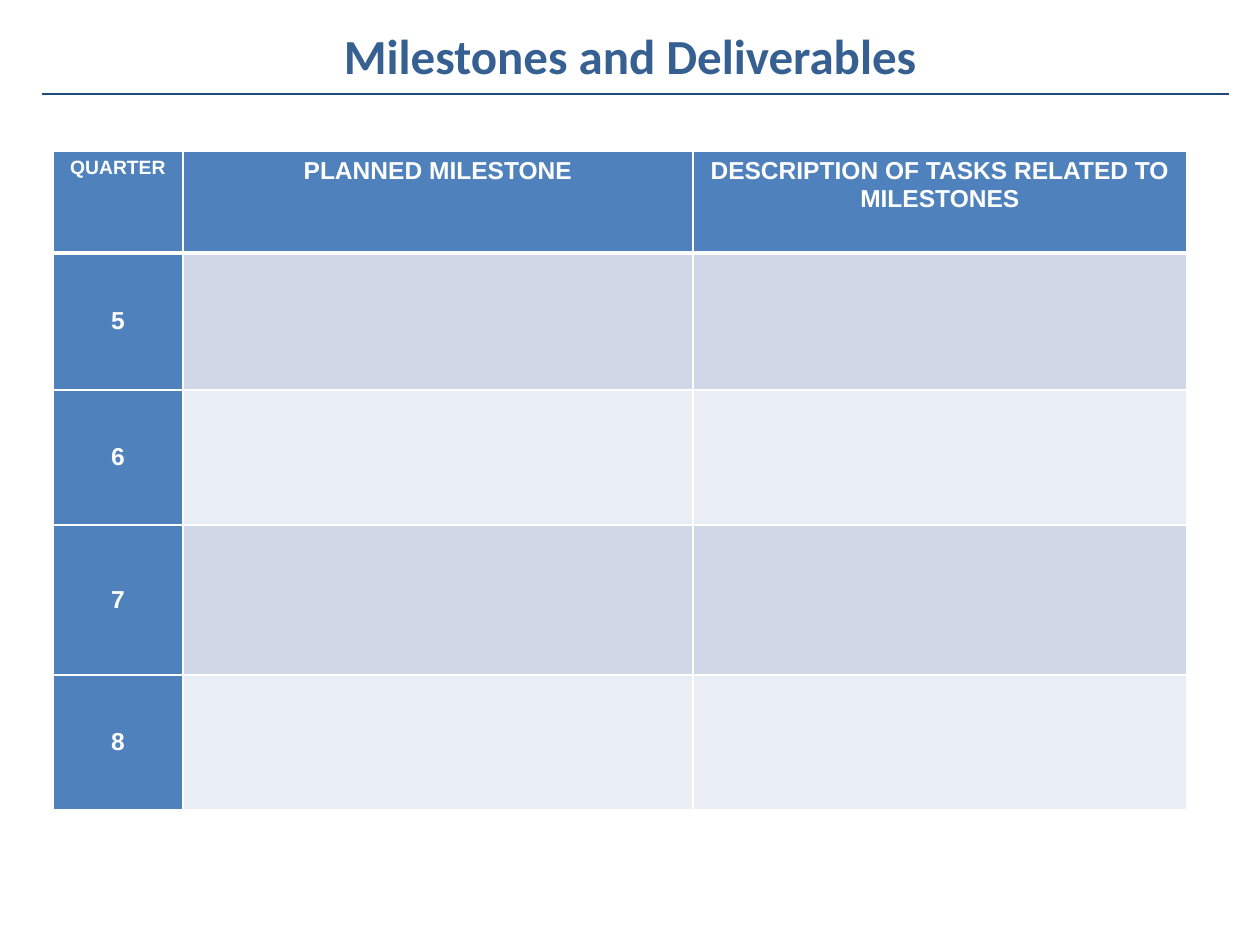
import lxml.etree
import pptx
import pptx.dml.color
import pptx.enum.shapes
import pptx.enum.text
import pptx.oxml.ns
import pptx.util

PX = 914400 / 126  # EMU in one px

TITLE_BLUE = pptx.dml.color.RGBColor(0x37, 0x60, 0x92)
RULE_BLUE = pptx.dml.color.RGBColor(0x1F, 0x49, 0x7D)
HEADER_BLUE = pptx.dml.color.RGBColor(0x4F, 0x81, 0xBD)
BAND_DARK = pptx.dml.color.RGBColor(0xD0, 0xD8, 0xE8)
BAND_LIGHT = pptx.dml.color.RGBColor(0xE9, 0xED, 0xF4)
WHITE = pptx.dml.color.RGBColor(0xFF, 0xFF, 0xFF)

HEADINGS = [
    ("QUARTER", 11),
    ("PLANNED MILESTONE", 14),
    ("DESCRIPTION OF TASKS RELATED TO MILESTONES", 14),
]
QUARTERS = ["5", "6", "7", "8"]
COLUMN_WIDTHS = [130, 510, 494]
ROW_HEIGHTS = [102, 137, 135, 150, 135]


def emu(px):
    return pptx.util.Emu(round(px * PX))


def add_child(parent, tag, **attributes):
    return lxml.etree.SubElement(parent, pptx.oxml.ns.qn(tag), attributes)


def write_text(text_frame, text, size, font_name, color):
    paragraph = text_frame.paragraphs[0]
    paragraph.alignment = pptx.enum.text.PP_ALIGN.CENTER
    run = paragraph.add_run()
    run.text = text
    run.font.name = font_name
    run.font.size = pptx.util.Pt(size)
    run.font.bold = True
    run.font.color.rgb = color


def add_title(slide, left, top, width, height):
    title = slide.shapes.title
    title.left, title.top = emu(left), emu(top)
    title.width, title.height = emu(width), emu(height)
    title.text_frame.vertical_anchor = pptx.enum.text.MSO_ANCHOR.MIDDLE
    write_text(title.text_frame, "Milestones and Deliverables", 28, "Calibri", TITLE_BLUE)


def add_rule(slide, left, top, width):
    rule = slide.shapes.add_connector(
        pptx.enum.shapes.MSO_CONNECTOR.STRAIGHT,
        emu(left), emu(top), emu(left + width), emu(top))
    rule.line.color.rgb = RULE_BLUE
    rule.line.width = pptx.util.Pt(1)
    add_child(rule._element.spPr, "a:effectLst")


def style_cell(cell, fill_color, top_border, bottom_border):
    # Borders come before the fill in the cell properties
    properties = cell._tc.get_or_add_tcPr()
    borders = {"a:lnL": 1, "a:lnR": 1, "a:lnT": top_border, "a:lnB": bottom_border}
    for tag, points in borders.items():
        border = add_child(properties, tag, w=str(pptx.util.Pt(points)))
        add_child(add_child(border, "a:solidFill"), "a:srgbClr", val=str(WHITE))
    cell.fill.solid()
    cell.fill.fore_color.rgb = fill_color


def add_milestone_table(slide, left, top):
    table = slide.shapes.add_table(
        len(ROW_HEIGHTS), len(COLUMN_WIDTHS), emu(left), emu(top),
        emu(sum(COLUMN_WIDTHS)), emu(sum(ROW_HEIGHTS))).table
    for column, width in zip(table.columns, COLUMN_WIDTHS):
        column.width = emu(width)
    for row, height in zip(table.rows, ROW_HEIGHTS):
        row.height = emu(height)

    # Header row
    for cell, (heading, size) in zip(table.rows[0].cells, HEADINGS):
        style_cell(cell, HEADER_BLUE, 1, 3)
        write_text(cell.text_frame, heading, size, "Arial", WHITE)

    # One banded row for each quarter
    for index, quarter in enumerate(QUARTERS, start=1):
        band = BAND_DARK if index % 2 else BAND_LIGHT
        top_border = 3 if index == 1 else 1
        for column, fill_color in enumerate([HEADER_BLUE, band, band]):
            style_cell(table.cell(index, column), fill_color, top_border, 1)
        label = table.cell(index, 0)
        label.vertical_anchor = pptx.enum.text.MSO_ANCHOR.MIDDLE
        write_text(label.text_frame, quarter, 14, "Arial", WHITE)


def main():
    presentation = pptx.Presentation()
    presentation.slide_width = emu(1260)
    presentation.slide_height = emu(945)
    slide = presentation.slides.add_slide(presentation.slide_layouts.get_by_name("Title Only"))
    add_title(slide, 63, 16, 1134, 78)
    add_rule(slide, 42, 94, 1187)
    add_milestone_table(slide, 53, 151)
    presentation.save("out.pptx")


if __name__ == "__main__":
    main()
